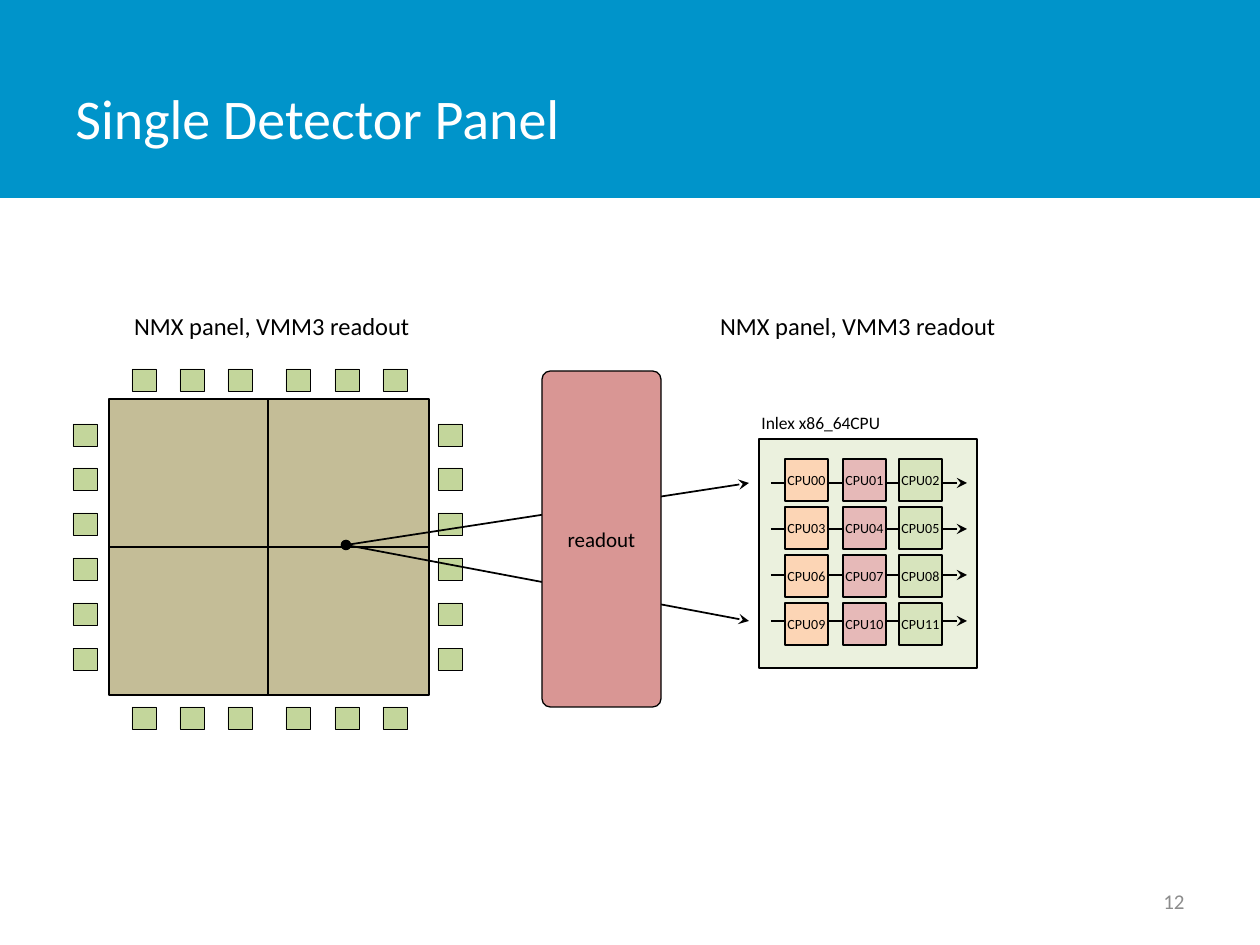
from lxml import etree
from pptx import Presentation
from pptx import util as u
from pptx.dml.color import RGBColor
from pptx.enum import shapes, text
from pptx.oxml.ns import qn

PX = 914400 // 126
RECT = shapes.MSO_SHAPE.RECTANGLE
LEFT, CENTER, RIGHT = text.PP_ALIGN.LEFT, text.PP_ALIGN.CENTER, text.PP_ALIGN.RIGHT
MIDDLE, TOP = text.MSO_ANCHOR.MIDDLE, text.MSO_ANCHOR.TOP
color = RGBColor.from_string

deck = Presentation()
deck.slide_width, deck.slide_height = u.Inches(10), u.Inches(7.5)
page = deck.slides.add_slide(deck.slide_layouts[6])


def add_box(kind, place, fill=None, line=0, label="", size=12, ink="000000",
            align=CENTER, anchor=MIDDLE):
    """Add a preset shape, or a plain text box when kind is None."""
    place = [n * PX for n in place]
    if kind is None:
        box = page.shapes.add_textbox(*place)
    else:
        box = page.shapes.add_shape(kind, *place)
        box.shadow.inherit = False
        box.fill.solid()
        box.fill.fore_color.rgb = color(fill)
        if line:
            box.line.color.rgb = color("000000")
            box.line.width = u.Pt(line)
        else:
            box.line.fill.background()
    if label:
        frame = box.text_frame
        frame.word_wrap = True
        frame.vertical_anchor = anchor
        if kind is not None:
            frame.margin_left = frame.margin_right = 0
        para = frame.paragraphs[0]
        para.alignment = align
        span = para.add_run()
        span.text = label
        for name, value in {"name": "Calibri", "size": u.Pt(size)}.items():
            setattr(span.font, name, value)
        span.font.color.rgb = color(ink)
    return box


def add_line(x1, y1, x2, y2, **ends):
    """Add a black line; ends maps headEnd or tailEnd to an arrowhead type."""
    line = page.shapes.add_connector(
        shapes.MSO_CONNECTOR.STRAIGHT, x1 * PX, y1 * PX, x2 * PX, y2 * PX)
    line.line.color.rgb = color("000000")
    line.line.width = u.Pt(1)
    stroke = line.line._get_or_add_ln()
    for end, style in ends.items():
        etree.SubElement(stroke, qn("a:" + end), type=style)
    etree.SubElement(line._element.spPr, qn("a:effectLst"))


# Title band and page number
add_box(RECT, (0, 0, 1260, 198), "0094CA")
add_box(None, (63, 38, 984, 158), label="Single Detector Panel", size=32,
        ink="FFFFFF", align=LEFT)
add_box(None, (903, 876, 294, 50), label="12", ink="8C8C8C", align=RIGHT)

# Detector panel with readout chips on all four sides
add_box(RECT, (109, 399, 320, 296), "C4BD97", 0.75)
chips = [(x, y) for y in (369, 707) for x in (132, 180, 228, 286, 335, 383)]
chips += [(x, 424 + 224 * i // 5) for x in (73, 438) for i in range(6)]
for x, y in chips:
    add_box(RECT, (x, y, 24, 22), "C3D69B", 0.25)
add_line(109, 547, 429, 547)
add_line(268, 695, 268, 399)

# Processor with four pipelines of three cores
add_box(RECT, (759, 439, 218, 229), "EBF1DE", 0.75)
for row in range(4):
    add_line(771, 483 + 46 * row, 967, 483 + 46 * row, tailEnd="stealth")
cores = [(785, "FCD5B5"), (843, "E6B9B8"), (899, "D7E4BD")]
for row in range(4):
    for column, (x, fill) in enumerate(cores):
        add_box(RECT, (x, 459 + 48 * row, 43, 42), fill, 0.75,
                f"CPU{3 * row + column:02d}", 8)

# Data paths from the panel, passing behind the readout
for y in (483, 621):
    add_line(346, 545, 749, y, headEnd="oval", tailEnd="stealth")

add_box(None, (749, 406, 218, 34), label="Inlex x86_64CPU", size=10,
        align=LEFT, anchor=TOP)
for x in (95, 681):
    add_box(None, (x, 305, 354, 42), label="NMX panel, VMM3 readout", size=14,
            anchor=TOP)
readout = add_box(shapes.MSO_SHAPE.ROUNDED_RECTANGLE, (542, 371, 119, 336),
                  "D99694", 0.75, "readout")
readout.adjustments[0] = 0.07

deck.save("out.pptx")
